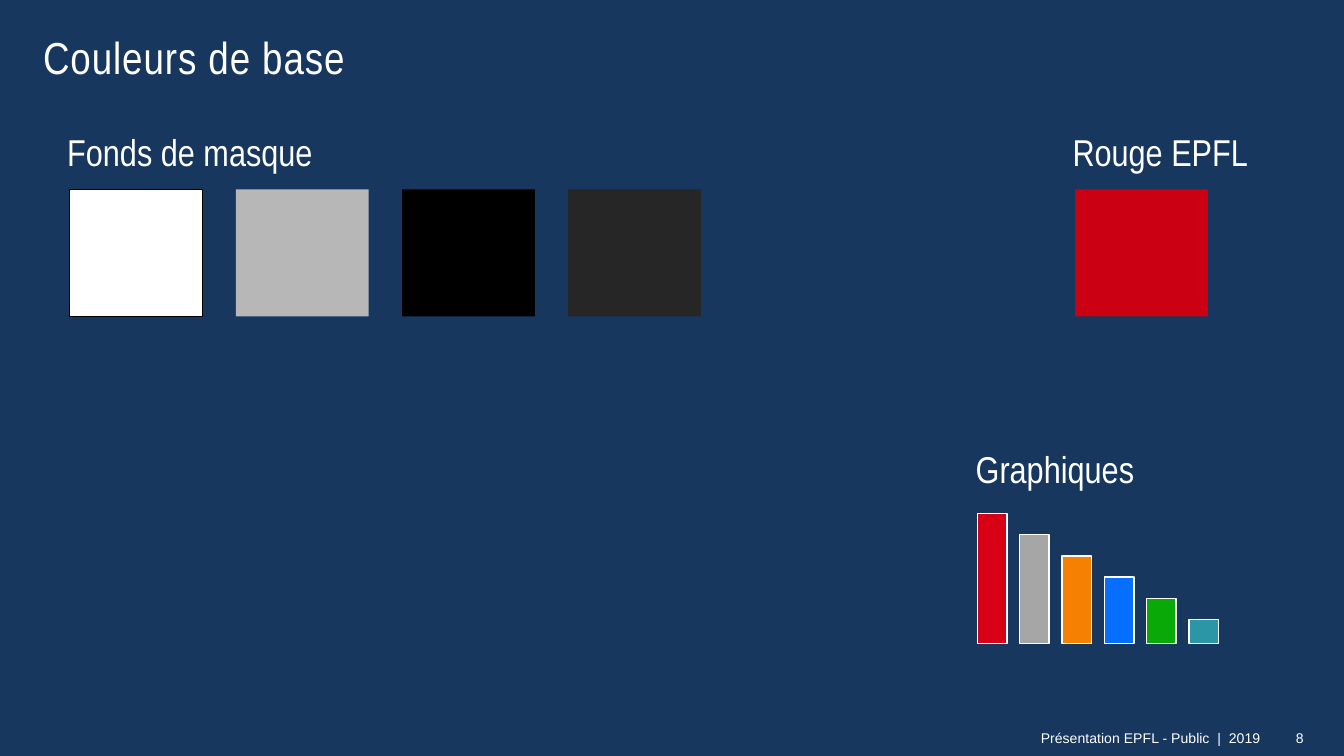
from pptx import Presentation
from pptx.dml.color import RGBColor
from pptx.enum.shapes import MSO_SHAPE
from pptx.enum.text import MSO_ANCHOR, MSO_AUTO_SIZE, PP_ALIGN
from pptx.util import Cm, Pt

RECTANGLE = MSO_SHAPE.RECTANGLE
TOP, MIDDLE, BOTTOM = MSO_ANCHOR.TOP, MSO_ANCHOR.MIDDLE, MSO_ANCHOR.BOTTOM
LEFT, RIGHT = PP_ALIGN.LEFT, PP_ALIGN.RIGHT
FIT_SHAPE, NO_FIT = MSO_AUTO_SIZE.SHAPE_TO_FIT_TEXT, MSO_AUTO_SIZE.NONE

# Content
TITLE = "Couleurs de base"
HEADINGS = [  # text, left, top, width in cm
    ("Fonds de masque", 1.02, 2.31, 5.18),
    ("Rouge EPFL", 20.02, 2.31, 3.86),
    ("Graphiques", 18.19, 8.31, 3.53),
]
MASK_COLORS = [  # fill, outline
    ("FFFFFF", "000000"),
    ("B7B7B7", None),
    ("000000", None),
    ("262626", None),
    ("17375E", None),
]
BRAND_RED = "CB0012"
CHART_COLORS = ["D70015", "A6A6A6", "F58001", "066FFF", "09AA08", "2B96A5"]
FOOTERS = [  # text, left, width in cm
    ("Présentation EPFL - Public  |  2019", 3.96, 19.99),
    ("8", 23.98, 0.79),
]

THEME = {
    "background": "17375E",
    "text": "FFFFFF",
    "heading_font": "Arial Narrow",
    "footer_font": "Arial",
    "title_size": 24,
    "heading_size": 20,
    "footer_size": 7.5,
    "outline": 0.75,
}

# Layout in cm
SWATCH_LEFT, SWATCH_TOP, SWATCH_STEP = 1.32, 3.58, 3.14
SWATCH_WIDTH, SWATCH_HEIGHT = 2.51, 2.4
RED_LEFT = 20.32
BAR_LEFT, BAR_BASE, BAR_STEP, BAR_WIDTH = 18.47, 12.16, 0.8, 0.56
BAR_TALLEST, BAR_DROP = 2.45, 0.4


def box(left, top, width, height):
    return Cm(left), Cm(top), Cm(width), Cm(height)


def add_block(slide, frame, fill, outline=None):
    block = slide.shapes.add_shape(RECTANGLE, *frame)
    block.shadow.inherit = False
    block.fill.solid()
    block.fill.fore_color.rgb = RGBColor.from_string(fill)
    if outline:
        block.line.color.rgb = RGBColor.from_string(outline)
        block.line.width = Pt(THEME["outline"])
    else:
        block.line.fill.background()


def write(shape, text, font_name, size, align=LEFT, anchor=TOP):
    frame = shape.text_frame
    frame.text = text
    frame.vertical_anchor = anchor
    paragraph = frame.paragraphs[0]
    paragraph.alignment = align
    run = paragraph.runs[0]
    run.font.name = font_name
    run.font.size = Pt(size)
    run.font.color.rgb = RGBColor.from_string(THEME["text"])
    return run


def main():
    deck = Presentation()
    deck.slide_width, deck.slide_height = Cm(25.4), Cm(14.29)
    slide = deck.slides.add_slide(deck.slide_layouts[5])
    slide.background.fill.solid()
    slide.background.fill.fore_color.rgb = RGBColor.from_string(THEME["background"])

    # Title
    title = slide.shapes.title
    title.left, title.top, title.width, title.height = box(0.56, 0.41, 24.28, 1.3)
    title.text_frame.auto_size = NO_FIT
    run = write(title, TITLE, THEME["heading_font"], THEME["title_size"], anchor=BOTTOM)
    run.font._element.set("spc", "50")

    # Mask backgrounds and brand red
    for i, (fill, outline) in enumerate(MASK_COLORS):
        left = SWATCH_LEFT + i * SWATCH_STEP
        add_block(slide, box(left, SWATCH_TOP, SWATCH_WIDTH, SWATCH_HEIGHT), fill, outline)
    add_block(slide, box(RED_LEFT, SWATCH_TOP, SWATCH_WIDTH, SWATCH_HEIGHT), BRAND_RED)

    # Section headings
    for text, left, top, width in HEADINGS:
        heading = slide.shapes.add_textbox(*box(left, top, width, 1.12))
        heading.text_frame.word_wrap = False
        heading.text_frame.auto_size = FIT_SHAPE
        write(heading, text, THEME["heading_font"], THEME["heading_size"])

    # Descending bars on a common base
    for i, fill in enumerate(CHART_COLORS):
        height = BAR_TALLEST - i * BAR_DROP
        left = BAR_LEFT + i * BAR_STEP
        add_block(slide, box(left, BAR_BASE - height, BAR_WIDTH, height), fill, THEME["text"])

    # Footer and page number
    for text, left, width in FOOTERS:
        footer = slide.shapes.add_textbox(*box(left, 13.64, width, 0.61))
        frame = footer.text_frame
        frame.word_wrap = True
        frame.margin_left = frame.margin_right = Cm(0.13)
        frame.margin_top = frame.margin_bottom = Cm(0.13)
        write(footer, text, THEME["footer_font"], THEME["footer_size"], RIGHT, MIDDLE)

    deck.save("out.pptx")


if __name__ == "__main__":
    main()
